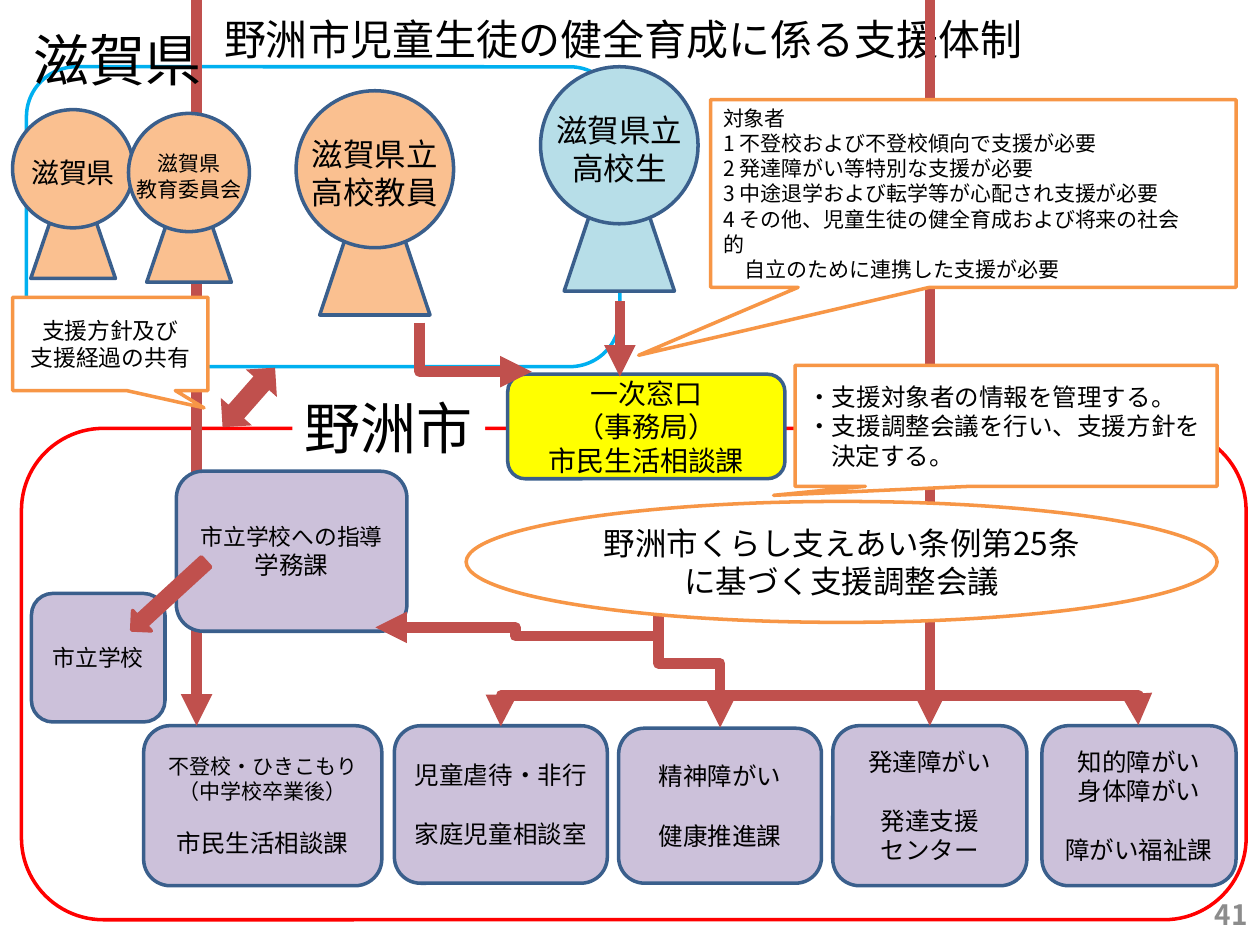
from lxml import etree
from pptx import Presentation
from pptx.dml.color import RGBColor
from pptx.enum.shapes import MSO_CONNECTOR, MSO_SHAPE
from pptx.enum.text import MSO_ANCHOR, PP_ALIGN
from pptx.oxml.ns import qn
from pptx.util import Inches, Pt

FONT = "Noto Sans CJK JP"
ROUND, OVAL, RECT = MSO_SHAPE.ROUNDED_RECTANGLE, MSO_SHAPE.OVAL, MSO_SHAPE.RECTANGLE
CONE, NOTE = MSO_SHAPE.ISOSCELES_TRIANGLE, MSO_SHAPE.RECTANGULAR_CALLOUT
DOWN, BOTH = MSO_SHAPE.DOWN_ARROW, MSO_SHAPE.UP_DOWN_ARROW
LINE, ELBOW = MSO_CONNECTOR.STRAIGHT, MSO_CONNECTOR.ELBOW
LEFT, MID, RIGHT = PP_ALIGN.LEFT, PP_ALIGN.CENTER, PP_ALIGN.RIGHT

BLACK = RGBColor(0, 0, 0)
WHITE = RGBColor(255, 255, 255)
GREY = RGBColor(0x8C, 0x8C, 0x8C)
NAVY = RGBColor(0x3A, 0x5F, 0x8C)
CYAN = RGBColor(0x00, 0xB0, 0xF0)
RED = RGBColor(0xFF, 0x00, 0x00)
BRICK = RGBColor(0xC0, 0x50, 0x4D)
ORANGE = RGBColor(0xF7, 0x96, 0x46)
PEACH = RGBColor(0xFA, 0xC0, 0x90)
AQUA = RGBColor(0xB7, 0xDE, 0xE8)
LILAC = RGBColor(0xCC, 0xC1, 0xDA)
YELLOW = RGBColor(0xFF, 0xFF, 0x00)


def shift(area, x, y, w, h):
    return area[0] + x, area[1] + y, w, h


def write(shape, lines, size=14, align=MID, color=BLACK, bold=False, left=0.1, right=0.1):
    frame = shape.text_frame
    frame.word_wrap = True
    frame.vertical_anchor = MSO_ANCHOR.MIDDLE
    frame.margin_left, frame.margin_right = Inches(left), Inches(right)
    frame.margin_top = frame.margin_bottom = Inches(0.05)
    for i, line in enumerate(lines):
        text, form = line if isinstance(line, tuple) else (line, {})
        para = frame.add_paragraph() if i else frame.paragraphs[0]
        para.alignment = align
        if "gap" in form:
            para.space_before = Pt(form["gap"])
        if "indent" in form:
            para._p.get_or_add_pPr().set("marL", str(Inches(form["indent"])))
        run = para.add_run()
        run.text = text
        font = run.font
        font.size, font.bold = Pt(form.get("size", size)), bold
        font.color.rgb = color
        font.name = FONT
        etree.SubElement(run._r.rPr, qn("a:ea"), typeface=FONT)


def label(slide, box, lines, **form):
    write(slide.shapes.add_textbox(*map(Inches, box)), lines, **form)


def draw(shapes, kind, box, fill=None, edge=NAVY, lines=(), tip=(), turn=0, **form):
    shape = shapes.add_shape(kind, *map(Inches, box))
    shape.shadow.inherit = False
    shape.rotation = turn
    if fill is None:
        shape.fill.background()
    else:
        shape.fill.solid()
        shape.fill.fore_color.rgb = fill
    if edge is None:
        shape.line.fill.background()
    else:
        shape.line.color.rgb = edge
        shape.line.width = Pt(2)
    for i, value in enumerate(tip):
        shape.adjustments[i] = value
    if lines:
        write(shape, lines, **form)
    return shape


def link(slide, kind, start, end, ends=("tailEnd",), turn=0, preset=None, bend=None):
    wire = slide.shapes.add_connector(kind, *map(Inches, start + end))
    wire.line.color.rgb = BRICK
    wire.line.width = Pt(6)
    props = wire._element.spPr
    stroke = props.find(qn("a:ln"))
    etree.SubElement(stroke, qn("a:round"))
    for name in ends:
        etree.SubElement(stroke, qn("a:" + name), type="triangle")
    etree.SubElement(props, qn("a:effectLst"))
    if turn:
        props.find(qn("a:xfrm")).set("rot", str(turn * 60000))
    shape = props.find(qn("a:prstGeom"))
    if preset:
        shape.set("prst", preset)
    if bend:
        guides = shape.find(qn("a:avLst"))
        etree.SubElement(guides, qn("a:gd"), name="adj1", fmla=f"val {bend * 100000}")
    return wire


def person(slide, box, fill, lines, size):
    x, y, w, h = box
    group = slide.shapes.add_group_shape()
    draw(group.shapes, CONE, (x + 0.15 * w, y + 0.265 * h, 0.7 * w, 0.735 * h), fill)
    draw(group.shapes, OVAL, (x, y, w, 0.7 * h), fill)
    high = len(lines) * size / 60 + 0.1
    label(slide, (x - 0.1, y + 0.35 * h + 0.03 - high / 2, w + 0.2, high), lines, size=size)


def people(slide, area):
    big, small = (1.25, 1.78), (0.96, 1.34)
    person(slide, shift(area, 4.08, 0, *big), AQUA, ["滋賀県立", "高校生"], 18)
    person(slide, shift(area, 2.14, 0.19, *big), PEACH, ["滋賀県立", "高校教員"], 18)
    person(slide, shift(area, -0.11, 0.34, *small), PEACH, ["滋賀県"], 16)
    person(slide, shift(area, 0.81, 0.37, *small), PEACH, ["滋賀県", "教育委員会"], 12)
    label(slide, shift(area, -0.05, -0.38, 1.55, 0.64), ["滋賀県"], size=32)


def units(slide, area):
    low = {"gap": 17}
    rows = [
        (0, 0, 1.89, 1.27, [("不登校・ひきこもり", {"size": 12}), ("（中学校卒業後）", {"size": 12}),
                            ("市民生活相談課", {"gap": 14})]),
        (1.99, 0, 1.69, 1.25, ["児童虐待・非行", ("家庭児童相談室", low)]),
        (3.77, 0.02, 1.61, 1.23, ["精神障がい", ("健康推進課", low)]),
        (5.47, 0, 1.54, 1.27, ["発達障がい", ("発達支援", low), "センター"]),
        (7.13, 0, 1.54, 1.27, ["知的障がい", "身体障がい", ("障がい福祉課", low)]),
    ]
    return [draw(slide.shapes, ROUND, shift(area, *box), LILAC, lines=lines)
            for *box, lines in rows]


def trunks(slide, care):
    link(slide, LINE, (1.56, 0), (1.56, 5.76))
    link(slide, LINE, (7.38, 0), (7.38, 5.76)).end_connect(care, 0)
    link(slide, ELBOW, (6.51, 8.29), (6.5, 3.23), ("headEnd", "tailEnd"), turn=90, bend=25)
    link(slide, ELBOW, (5.98, 5.02), (4.96, 5.51), turn=270)


def offices(slide, area):
    draw(slide.shapes, ROUND, shift(area, 3.86, -0.43, 2.2, 0.83), YELLOW,
         lines=["一次窓口", "（事務局）", "市民生活相談課"], size=16)
    draw(slide.shapes, ROUND, shift(area, 1.23, 0.34, 1.83, 1.27), LILAC,
         lines=[("市立学校への指導", {"size": 13}), "学務課"])
    draw(slide.shapes, ROUND, shift(area, 0.08, 1.31, 1.06, 1.02), LILAC,
         lines=["市立学校"], size=13)
    draw(slide.shapes, RECT, shift(area, 2.15, -0.33, 1.53, 0.64), WHITE, None,
         lines=["野洲市"], size=32, left=0.05, right=0.05)


def notes(slide, area):
    def note(box, tip, lines, **form):
        draw(slide.shapes, NOTE, shift(area, *box), WHITE, ORANGE, lines, tip, **form)

    note((5.54, 0, 4.17, 1.49), (-0.637, 0.862),
         ["対象者", "1\u00a0不登校および不登校傾向で支援が必要", "2\u00a0発達障がい等特別な支援が必要",
          "3\u00a0中途退学および転学等が心配され支援が必要",
          "4\u00a0その他、児童生徒の健全育成および将来の社会的",
          ("自立のために連携した支援が必要", {"indent": 0.17})],
         size=12, align=LEFT, right=0.28)
    draw(slide.shapes, OVAL, shift(area, 3.6, 3.19, 5.96, 0.96), WHITE, ORANGE,
         ["野洲市くらし支えあい条例第25条に基づく支援調整会議"], size=18)
    note((6.21, 2.11, 3.35, 0.96), (-0.551, 0.575),
         ["・支援対象者の情報を管理する。", "・支援調整会議を行い、支援方針を",
          ("決定する。", {"indent": 0.19})], align=LEFT)
    note((0, 1.57, 1.55, 0.74), (0.48, 0.686), ["支援方針及び", "支援経過の共有"], size=13)


def arrows(slide):
    link(slide, LINE, (4.92, 2.39), (4.92, 2.99))
    link(slide, ELBOW, (3.97, 2.31), (3.58, 3.2), turn=270, preset="bentConnector2")
    link(slide, ELBOW, (5.2, 5.05), (2.98, 4.98))
    draw(slide.shapes, BOTH, (1.81, 2.84, 0.33, 0.63), BRICK, None, turn=41.4)
    draw(slide.shapes, DOWN, (1.23, 4.33, 0.22, 0.8), BRICK, BRICK, turn=47.5)


def main():
    deck = Presentation()
    deck.slide_width, deck.slide_height = Inches(10), Inches(7.5)
    slide = deck.slides.add_slide(deck.slide_layouts[5])
    title = slide.shapes.title
    title.left, title.top, title.width, title.height = map(Inches, (0.78, 0.06, 8.33, 0.5))
    write(title, ["野洲市児童生徒の健全育成に係る支援体制"], size=24)
    state, city = (0.21, 0.53, 4.71, 2.38), (0.17, 3.4, 9.72, 3.9)
    draw(slide.shapes, ROUND, state, edge=CYAN)
    draw(slide.shapes, ROUND, city, edge=RED)
    row = units(slide, (1.14, 5.76, 8.67, 1.27))
    trunks(slide, row[3])
    people(slide, state)
    offices(slide, city)
    notes(slide, (0.1, 0.79, 9.71, 4.15))
    arrows(slide)
    label(slide, (7.73, 7.06, 2.27, 0.4), ["41"], size=16, align=RIGHT, color=GREY, bold=True)
    deck.save("out.pptx")


if __name__ == "__main__":
    main()
